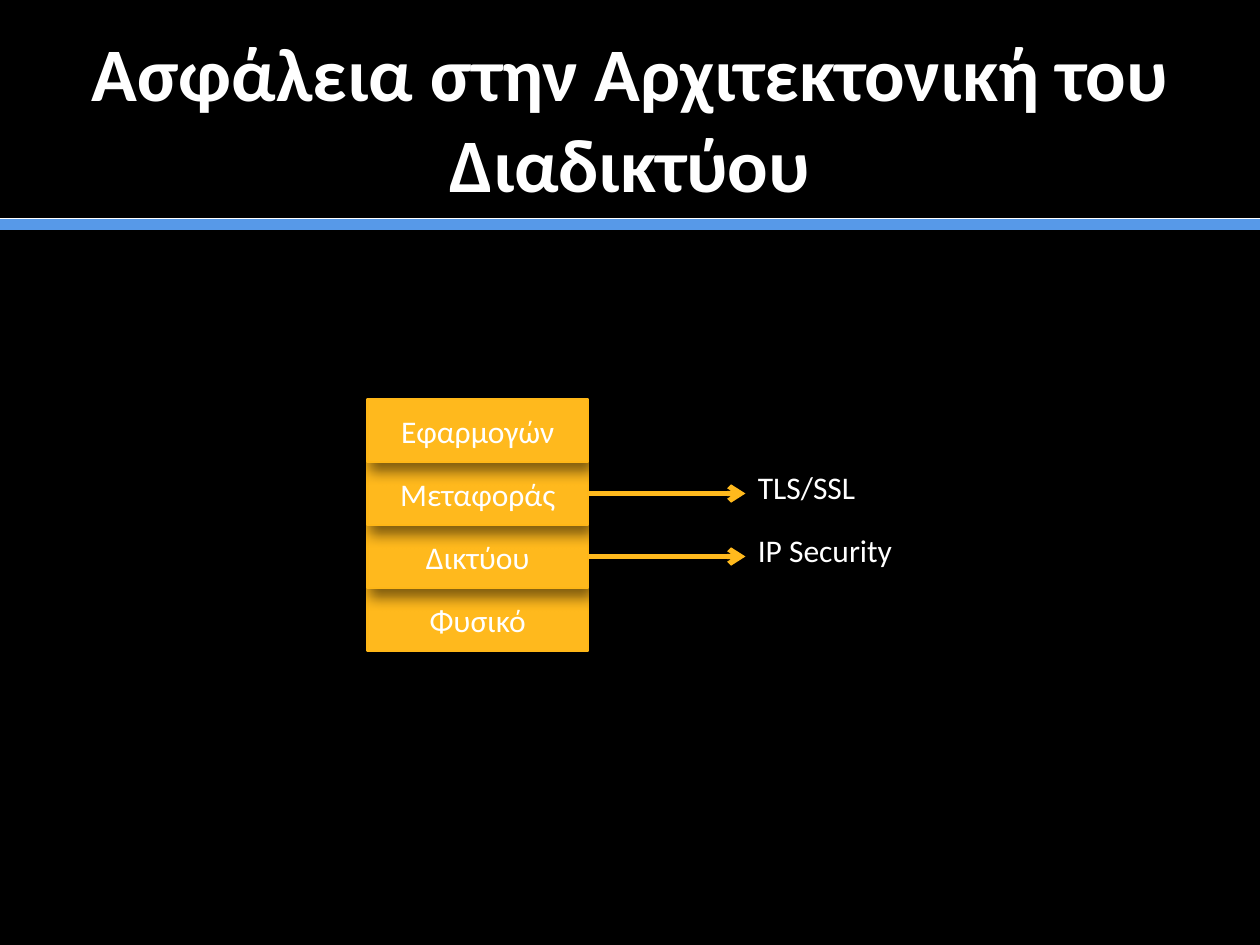
from lxml import etree
from pptx import Presentation
from pptx.dml.color import RGBColor
from pptx.enum import shapes, text
from pptx.oxml import ns
from pptx.util import Pt

BLACK = RGBColor(0x00, 0x00, 0x00)
WHITE = RGBColor(0xFF, 0xFF, 0xFF)
BLUE = RGBColor(0x57, 0x99, 0xE8)
AMBER = RGBColor(0xFF, 0xB9, 0x1D)
AMBER_EDGE = RGBColor(0xFF, 0xB7, 0x17)
FONT = "Calibri"
WIDTH, HEIGHT = 720, 540
LAYERS = [("Εφαρμογών", None), ("Μεταφοράς", "TLS/SSL"),
          ("Δικτύου", "IP Security"), ("Φυσικό", None)]


def set_text(sp, content, size, align, anchor, bold=False):
    tf = sp.text_frame
    tf.text = content
    tf.word_wrap = True
    tf.vertical_anchor = anchor
    p = tf.paragraphs[0]
    p.alignment = align
    font = p.runs[0].font
    font.name, font.size, font.bold = FONT, Pt(size), bold
    font.color.rgb = WHITE


def add_line(s, x1, y1, x2, y2, color, width):
    line = s.shapes.add_connector(shapes.MSO_CONNECTOR.STRAIGHT,
                                  Pt(x1), Pt(y1), Pt(x2), Pt(y2))
    line.line.color.rgb = color
    line.line.width = Pt(width)
    etree.SubElement(line._element.spPr, ns.qn("a:effectLst"))
    return line


def add_shadow(sp):
    sp.shadow.inherit = False
    effects = sp._element.spPr.find(ns.qn("a:effectLst"))
    shadow = etree.SubElement(effects, ns.qn("a:outerShdw"), blurRad=str(Pt(8)),
                              dist=str(Pt(5)), dir=str(70 * 60000), rotWithShape="0")
    color = etree.SubElement(shadow, ns.qn("a:srgbClr"), val=str(BLACK))
    etree.SubElement(color, ns.qn("a:alpha"), val="50000")


def add_header(s, left, top, width, height):
    add_line(s, 0, top + 106.5, WIDTH, top + 106.5, BLUE, 7)
    add_line(s, 0, top + 103, WIDTH, top + 103, WHITE, 0.5)
    title = s.shapes.add_textbox(Pt(left), Pt(top), Pt(width), Pt(height))
    set_text(title, "Ασφάλεια στην Αρχιτεκτονική του Διαδικτύου", 43.2,
             text.PP_ALIGN.CENTER, text.MSO_ANCHOR.MIDDLE, bold=True)


def add_layer(s, name, left, top, width, height):
    sp = s.shapes.add_shape(shapes.MSO_SHAPE.RECTANGLE,
                            Pt(left), Pt(top), Pt(width), Pt(height))
    sp.fill.solid()
    sp.fill.fore_color.rgb = AMBER
    sp.line.color.rgb = AMBER_EDGE
    sp.line.width = Pt(1.5)
    add_shadow(sp)
    set_text(sp, name, 18, text.PP_ALIGN.CENTER, text.MSO_ANCHOR.MIDDLE)
    return sp


def add_protocol(s, layer, protocol, left, top, width, height):
    label = s.shapes.add_textbox(Pt(left), Pt(top), Pt(width), Pt(height))
    set_text(label, protocol, 18, text.PP_ALIGN.LEFT, text.MSO_ANCHOR.TOP)
    label.text_frame.auto_size = text.MSO_AUTO_SIZE.SHAPE_TO_FIT_TEXT
    middle = (layer.top + layer.height / 2) / Pt(1)
    arrow = add_line(s, left - 90, middle, left, middle, AMBER, 3)
    arrow.begin_connect(layer, 3)
    etree.SubElement(arrow.line._get_or_add_ln(), ns.qn("a:tailEnd"), type="arrow")


def add_stack(s, left, top, width, height):
    layer_height = height / len(LAYERS)
    rows = [(name, protocol, top + i * layer_height)
            for i, (name, protocol) in enumerate(LAYERS)]
    layers = {name: add_layer(s, name, left, y, 126, layer_height)
              for name, _, y in reversed(rows)}
    for name, protocol, y in rows:
        if protocol:
            add_protocol(s, layers[name], protocol, left + 216, y, width - 216, 29)


def main():
    prs = Presentation()
    prs.slide_width, prs.slide_height = Pt(WIDTH), Pt(HEIGHT)
    s = prs.slides.add_slide(prs.slide_layouts[6])
    s.background.fill.solid()
    s.background.fill.fore_color.rgb = BLACK
    add_header(s, 36, 21.6, 648, 90)
    add_stack(s, 210, 228, 330, 144)
    prs.save("out.pptx")


if __name__ == "__main__":
    main()
